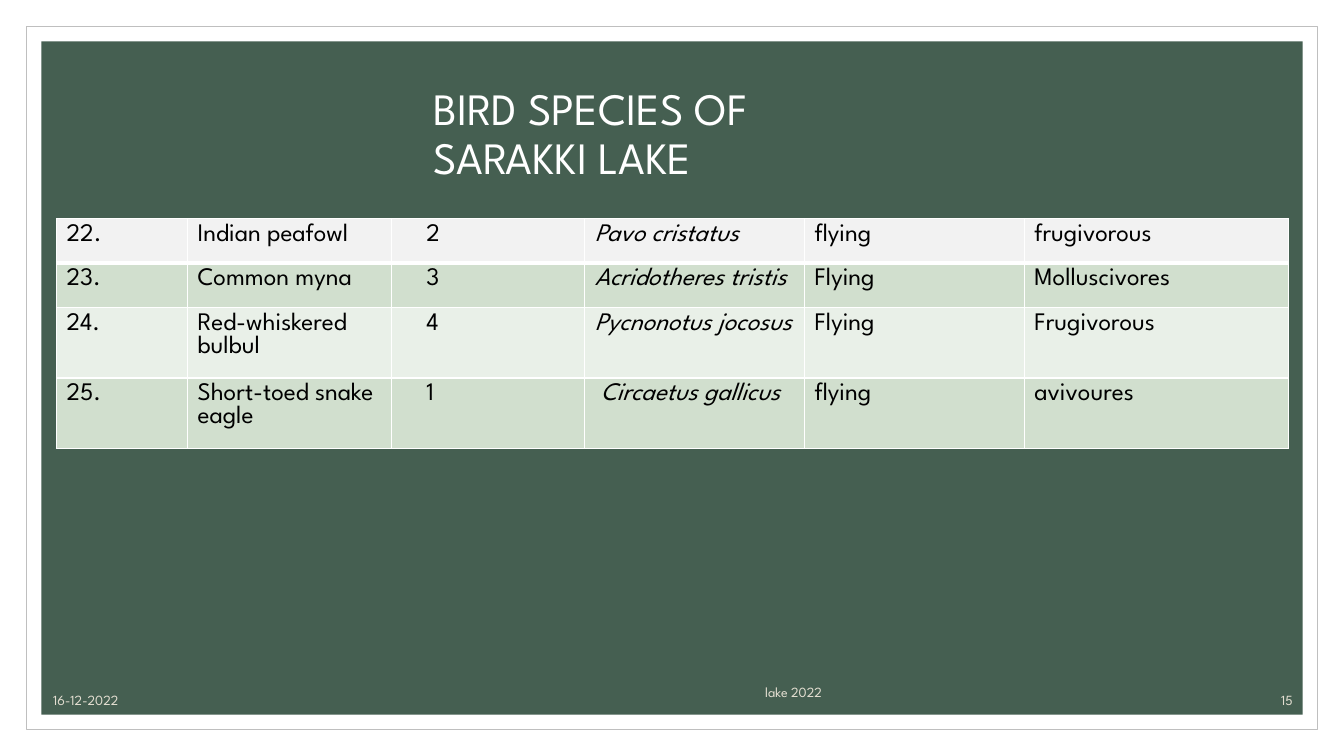
import pptx
import pptx.util
import pptx.dml.color
import pptx.enum.shapes
import pptx.enum.text
import pptx.oxml
import pptx.oxml.ns

BIRDS = [
    ("22.", "Indian peafowl", "2", "Pavo cristatus", "flying", "frugivorous"),
    ("23.", "Common myna", "3", "Acridotheres tristis", "Flying", "Molluscivores"),
    ("24.", "Red-whiskered bulbul", "4", "Pycnonotus jocosus", "Flying", "Frugivorous"),
    ("25.", "Short-toed snake eagle", "1", "\u00a0Circaetus gallicus".strip(), "flying", "avivoures"),
]
COLORS = {"white": "FFFFFF", "frame": "BFBFBF", "panel": "455F51", "footer": "E3DED1",
          "black": "000000", "first": "F2F2F2", "dark": "D1DFCE", "light": "E9F0E8"}
FONT = "League Spartan"
WIDTH, HEIGHT = 13.33, 7.5
COLS = [1.3, 2.02, 1.92, 2.18, 2.18, 2.62]
ROWS = [0.44, 0.44, 0.56, 0.56]
ROW_FILLS = ["first", "dark", "light", "dark"]
COUNT, LATIN = 2, 3
CELL_INSET, COUNT_INSET, LAST_LATIN_INSET = 0.1, 0.35, 0.16
FRAMES = [(0.26, "white", "frame"), (0.41, "panel", None)]
ALIGN = pptx.enum.text.PP_ALIGN
ANCHOR = pptx.enum.text.MSO_ANCHOR
TEXTS = [
    ("BIRD SPECIES OF SARAKKI LAKE", (4.2, 0.52, 4.4, 1.65),
     dict(size=32, color="white", spacing=0.9), ANCHOR.MIDDLE),
    ("16-12-2022", (0.43, 6.8, 3, 0.28), dict(size=10, color="footer"), ANCHOR.BOTTOM),
    ("lake 2022", (5.02, 6.72, 5.7, 0.28),
     dict(size=10, color="footer", align=ALIGN.CENTER), ANCHOR.BOTTOM),
    ("15", (11.32, 6.8, 1.6, 0.28),
     dict(size=10, color="footer", align=ALIGN.RIGHT), ANCHOR.BOTTOM),
]


def rgb(name):
    return pptx.dml.color.RGBColor.from_string(COLORS[name])


def inches(*values):
    return [pptx.util.Inches(v) for v in values]


def write(tf, text, size=18, color="black", italic=False, align=ALIGN.LEFT, spacing=None):
    tf.word_wrap = True
    p = tf.paragraphs[0]
    p.alignment = align
    if spacing:
        p.line_spacing = spacing
    r = p.add_run()
    r.text = text
    r.font.name = FONT
    r.font.size = pptx.util.Pt(size)
    r.font.italic = italic
    r.font.color.rgb = rgb(color)


def set_borders(cell, widths):
    tcPr = cell._tc.get_or_add_tcPr()
    for i, (side, width) in enumerate(widths.items()):
        tcPr.insert(i, pptx.oxml.parse_xml(
            f'<a:ln{side} {pptx.oxml.ns.nsdecls("a")} w="{pptx.util.Pt(width)}"><a:solidFill>'
            f'<a:srgbClr val="{COLORS["white"]}"/></a:solidFill></a:ln{side}>'))


def add_frame(s, margin, fill, line):
    sp = s.shapes.add_shape(
        pptx.enum.shapes.MSO_SHAPE.RECTANGLE,
        *inches(margin, margin, WIDTH - 2 * margin, HEIGHT - 2 * margin))
    sp.shadow.inherit = False
    sp.fill.solid()
    sp.fill.fore_color.rgb = rgb(fill)
    if line:
        sp.line.color.rgb = rgb(line)
        sp.line.width = pptx.util.Pt(0.5)
    else:
        sp.line.fill.background()


def add_birds(s):
    table = s.shapes.add_table(len(ROWS), len(COLS),
                               *inches(0.56, 2.17, sum(COLS), sum(ROWS))).table
    for col, width in zip(table.columns, COLS):
        col.width = pptx.util.Inches(width)
    for row, height in zip(table.rows, ROWS):
        row.height = pptx.util.Inches(height)
    last = len(BIRDS) - 1
    for i, bird in enumerate(BIRDS):
        for j, text in enumerate(bird):
            cell = table.cell(i, j)
            inset = CELL_INSET
            if j == COUNT:
                inset = COUNT_INSET
            elif j == LATIN and i == last:
                inset = LAST_LATIN_INSET
            cell.margin_left = pptx.util.Inches(inset)
            cell.fill.solid()
            cell.fill.fore_color.rgb = rgb(ROW_FILLS[i])
            set_borders(cell, {"L": 1, "R": 1, "T": 3 if i == 1 else 1, "B": 3 if i == 0 else 1})
            write(cell.text_frame, text, italic=j == LATIN)


def main():
    prs = pptx.Presentation()
    prs.slide_width, prs.slide_height = inches(WIDTH, HEIGHT)
    s = prs.slides.add_slide(prs.slide_layouts[6])
    for frame in FRAMES:
        add_frame(s, *frame)
    for text, box, style, anchor in TEXTS:
        tf = s.shapes.add_textbox(*inches(*box)).text_frame
        tf.vertical_anchor = anchor
        write(tf, text, **style)
    add_birds(s)
    prs.save("out.pptx")


if __name__ == "__main__":
    main()
